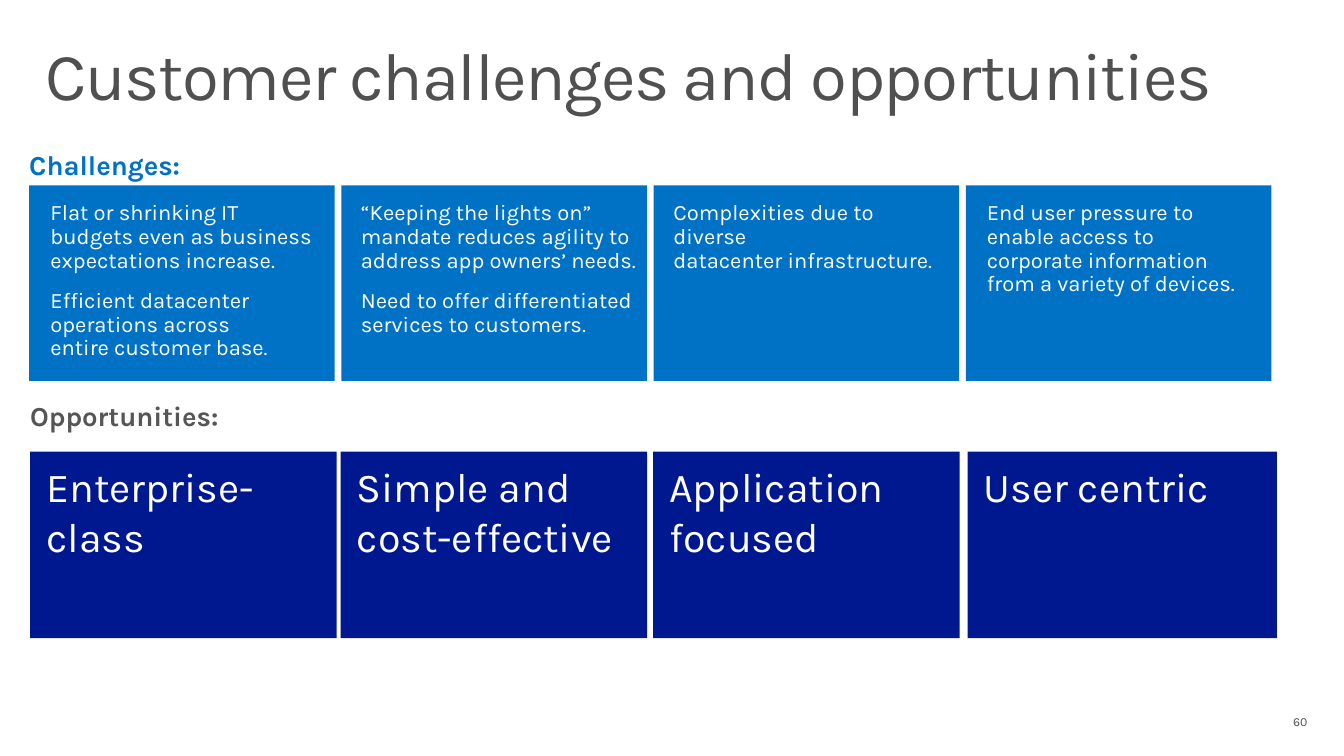
from pptx import Presentation
from pptx.dml.color import RGBColor
from pptx.enum.shapes import MSO_SHAPE
from pptx.enum.text import MSO_ANCHOR, MSO_AUTO_SIZE, PP_ALIGN
from pptx.util import Pt

FONT = "Karla"
COLORS = {"title": "505050", "challenge": "0072C6", "opportunity": "00188F",
          "opportunity_label": "565656", "white": "FFFFFF"}

TITLE = "Customer challenges and opportunities"
PAGE_NUMBER = "60"
# label, (left, top, width, height), colour
LABELS = [
    ("Challenges:", (20.9, 91.4, 224.6, 51.8), "challenge"),
    ("Opportunities:", (21.6, 272.2, 192.2, 49.7), "opportunity_label"),
]
# paragraphs, text left, text width, text height
CHALLENGES = [
    (["Flat or shrinking IT \nbudgets even as business expectations increase.",
      "Efficient datacenter operations across \nentire customer base."],
     21.6, 216.7, 137.5),
    (["“Keeping the lights on” mandate reduces agility to address app owners’ needs.",
      "Need to offer differentiated services to customers."],
     243.4, 234.7, 120.2),
    (["Complexities due to diverse \ndatacenter infrastructure."], 466.6, 223.9, 56.9),
    (["End user pressure to enable access to corporate information "
      "from a variety of devices."], 690.5, 217.4, 91.4),
]
# text, left, width
OPPORTUNITIES = [
    ("Enterprise-class", 21.6, 218.9),
    ("Simple and \ncost-effective", 243.4, 218.9),
    ("Application \nfocused", 466.6, 218.9),
    ("User centric", 691.2, 221),
]
CARD_LEFT, CARD_PITCH, CARD_WIDTH = 20.9, 223, 218.2
CHALLENGE_TOP, CHALLENGE_HEIGHT = 132.5, 139.7
OPPORTUNITY_TOP, OPPORTUNITY_HEIGHT = 322.6, 133.2


def write(frame, paragraphs, size, color, insets=(7.2, 3.6), anchor=MSO_ANCHOR.TOP,
          bold=False, line_spacing=None, gap=0):
    """Fill a text frame; a newline inside a paragraph becomes a line break."""
    frame.word_wrap = True
    frame.auto_size = MSO_AUTO_SIZE.NONE
    frame.vertical_anchor = anchor
    frame.margin_left = frame.margin_right = Pt(insets[0])
    frame.margin_top = frame.margin_bottom = Pt(insets[1])
    for index, text in enumerate(paragraphs):
        paragraph = frame.add_paragraph() if index else frame.paragraphs[0]
        paragraph.alignment = PP_ALIGN.LEFT
        paragraph.line_spacing = line_spacing
        paragraph.space_before = paragraph.space_after = Pt(gap)
        for number, line in enumerate(text.split("\n")):
            if number:
                paragraph.add_line_break()
            run = paragraph.add_run()
            run.text = line
            run.font.name = FONT
            run.font.size = Pt(size)
            run.font.bold = bold
            run.font.color.rgb = RGBColor.from_string(COLORS[color])


def add_card(slide, box, color):
    card = slide.shapes.add_shape(MSO_SHAPE.RECTANGLE, *map(Pt, box))
    card.shadow.inherit = False
    card.fill.solid()
    card.fill.fore_color.rgb = RGBColor.from_string(COLORS[color])
    card.line.fill.background()
    return card


def add_text(slide, box):
    return slide.shapes.add_textbox(*map(Pt, box)).text_frame


def main():
    deck = Presentation()
    deck.slide_width, deck.slide_height = Pt(960), Pt(540)
    slide = deck.slides.add_slide(deck.slide_layouts[5])

    title = slide.shapes.title
    title.left, title.top, title.width, title.height = map(Pt, (20.9, 23, 917.3, 141.1))
    write(title.text_frame, [TITLE], 48, "title", (11.5, 7.2), line_spacing=0.9)
    # Tighten the letters by one point
    title.text_frame.paragraphs[0].runs[0].font._element.set("spc", "-100")

    for column, (paragraphs, left, width, height) in enumerate(CHALLENGES):
        add_card(slide, (CARD_LEFT + column * CARD_PITCH, CHALLENGE_TOP,
                         CARD_WIDTH, CHALLENGE_HEIGHT), "challenge")
        write(add_text(slide, (left, CHALLENGE_TOP, width, height)), paragraphs,
              15.7, "white", (14.4, 11.5), line_spacing=0.9, gap=5.9)

    for text, left, width in OPPORTUNITIES:
        card = add_card(slide, (left, OPPORTUNITY_TOP, width, OPPORTUNITY_HEIGHT),
                        "opportunity")
        write(card.text_frame, [text], 29.4, "white", (11.5, 7.2))

    for label, box, color in LABELS:
        write(add_text(slide, box), [label], 19.6, color, (0, 3.6),
              MSO_ANCHOR.MIDDLE, bold=True)

    write(add_text(slide, (916.6, 506.9, 43.4, 10.8)), [PAGE_NUMBER], 8.8, "title")
    deck.save("out.pptx")


if __name__ == "__main__":
    main()
